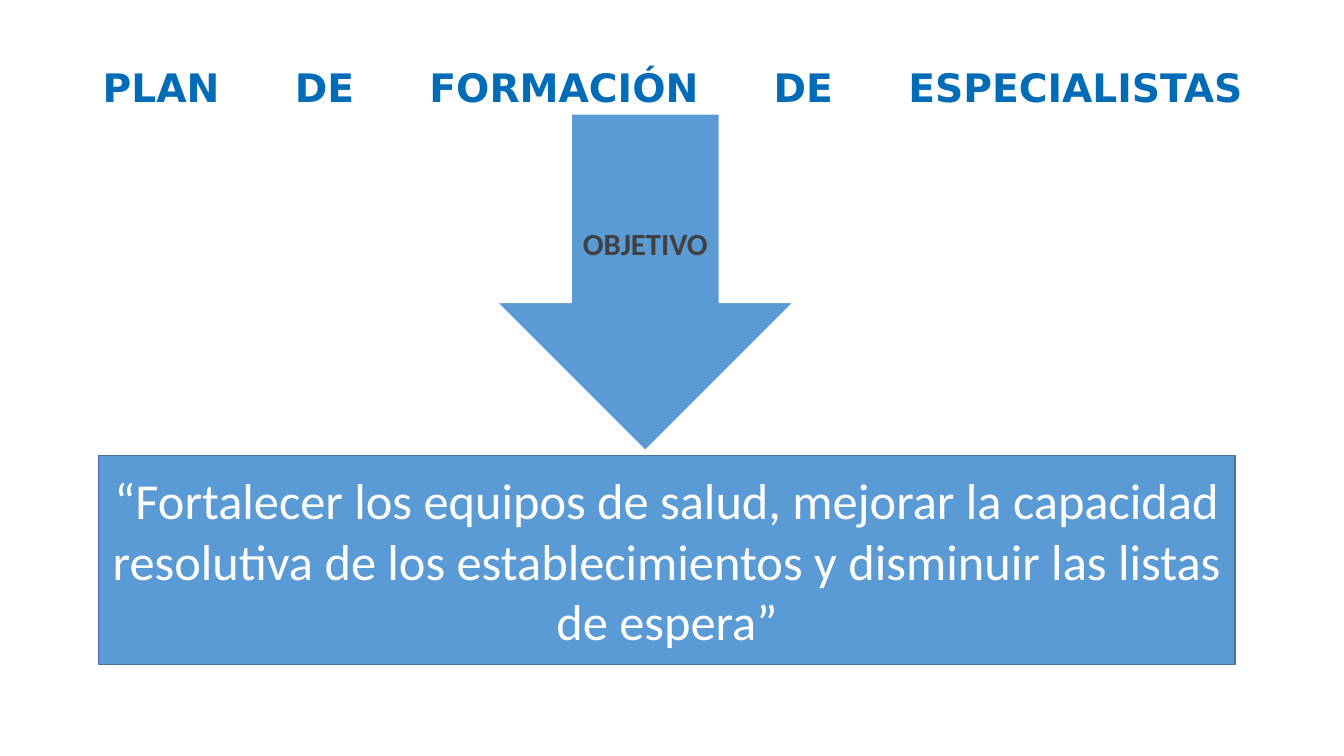
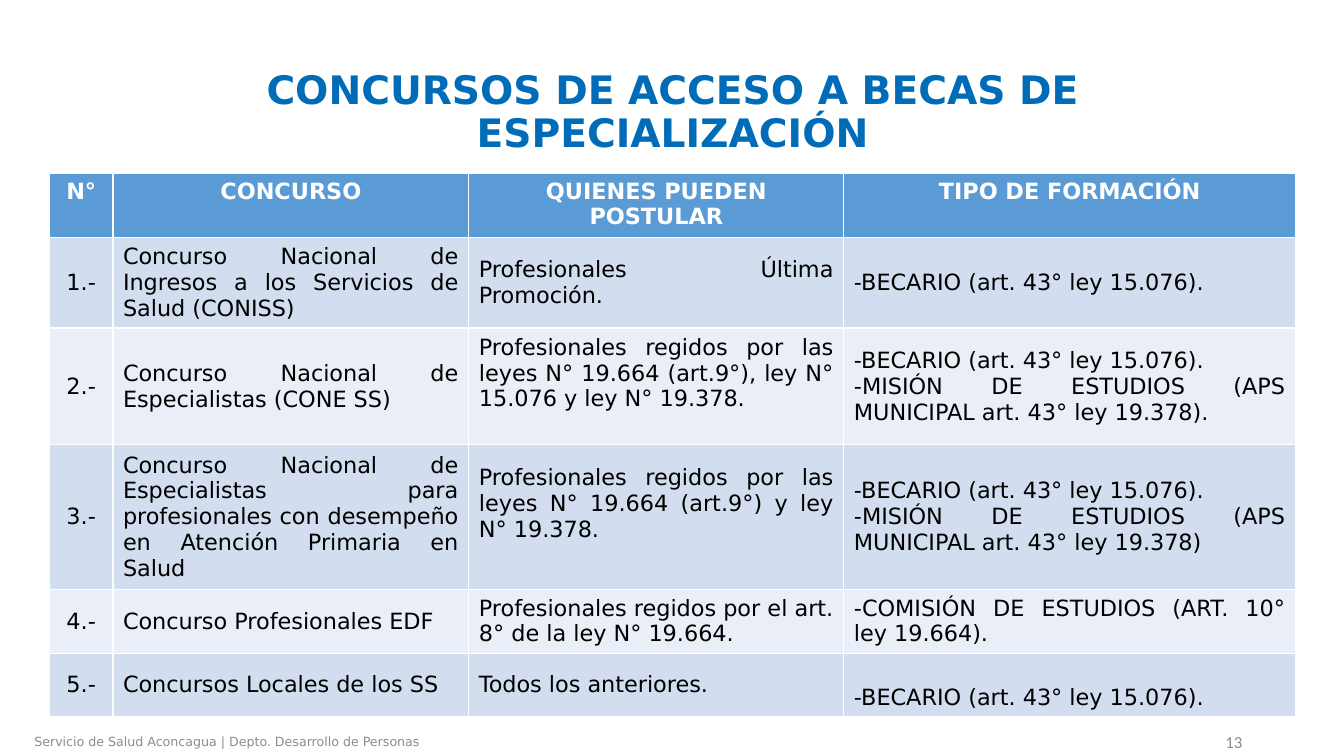
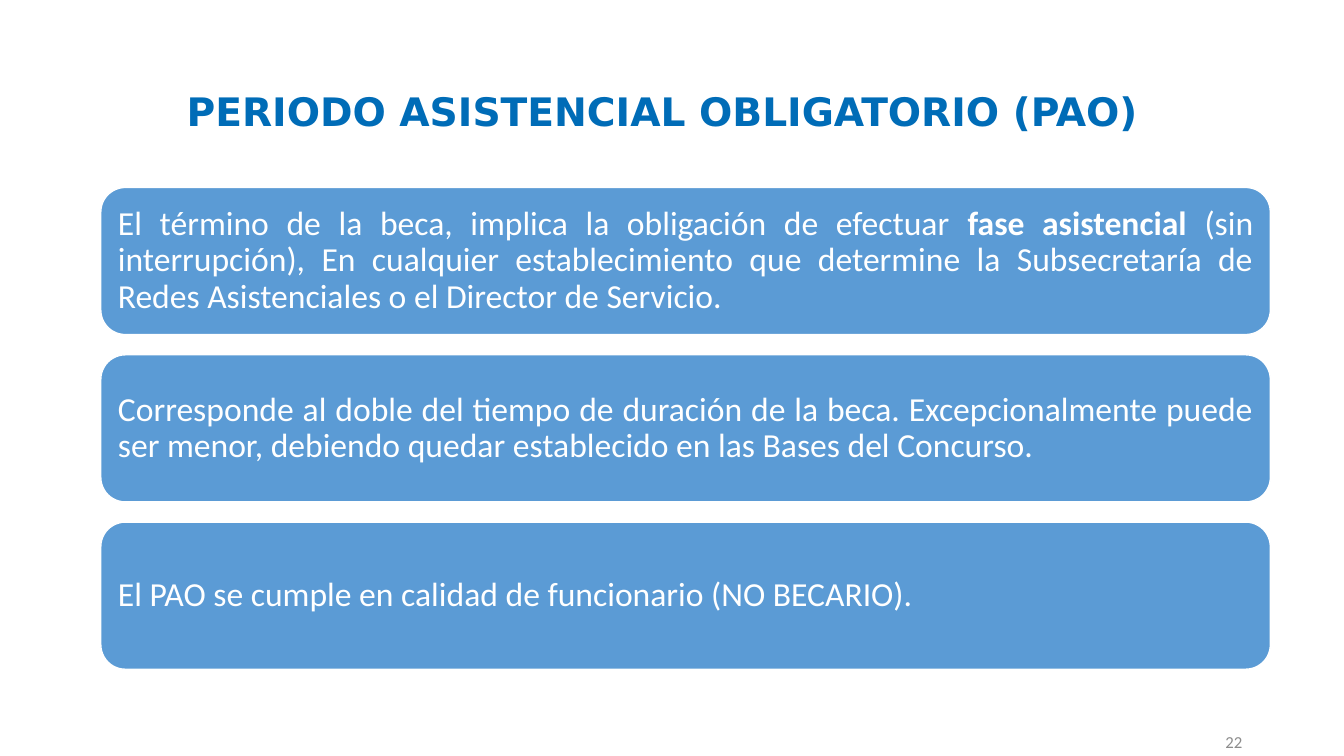
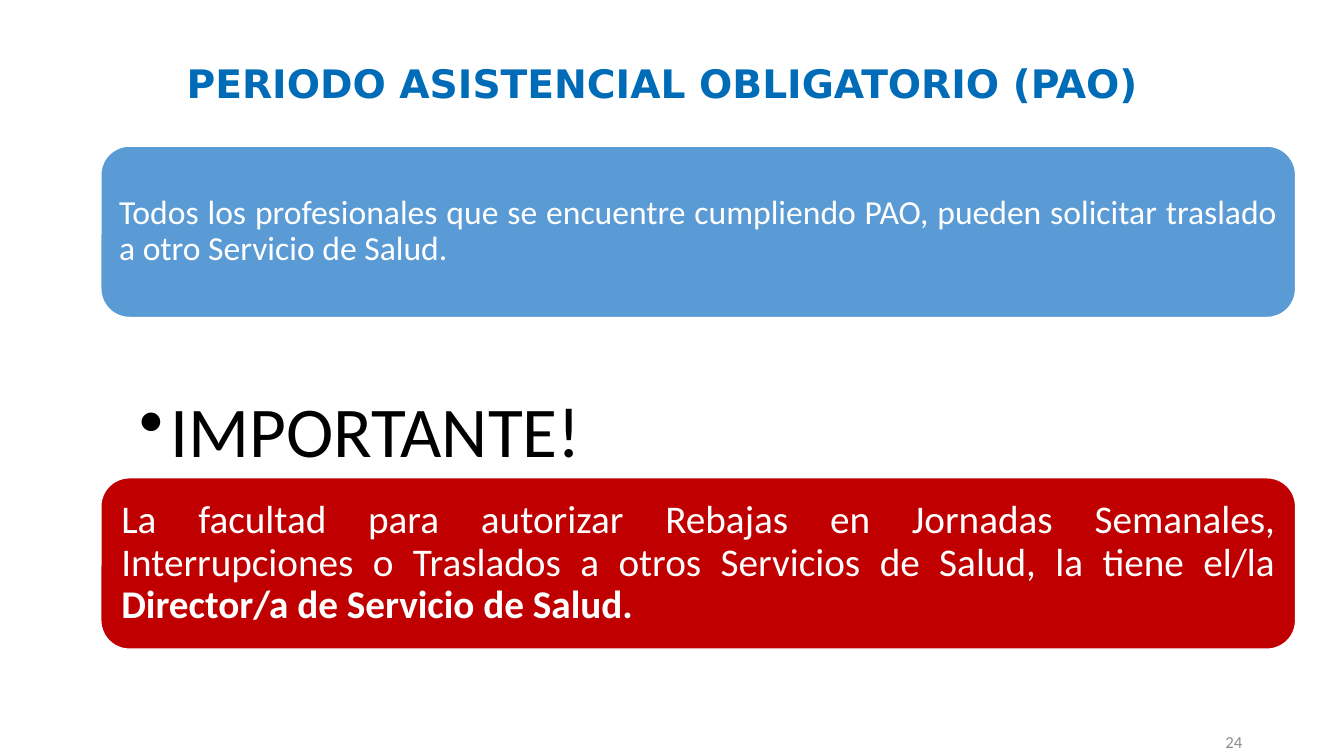
from copy import deepcopy

from lxml.etree import SubElement
from pptx import Presentation
from pptx.dml.color import RGBColor
from pptx.enum.shapes import MSO_SHAPE as Preset
from pptx.enum.text import MSO_ANCHOR as Anchor, PP_ALIGN as Align
from pptx.oxml.ns import qn
from pptx.util import Inches, Pt

COLORS = {
    "title": "006CB7",
    "blue": "5B9BD5",
    "outline": "43739E",
    "red": "C00000",
    "band_dark": "D2DEEF",
    "band_light": "EAEFF7",
    "white": "FFFFFF",
    "black": "000000",
    "dark_gray": "404040",
    "gray": "8C8C8C",
}
HEADING_FONT = "DejaVu Sans"
BODY_FONT = "Calibri"
PAO_TITLE = "PERIODO ASISTENCIAL OBLIGATORIO (PAO)"


def color(name):
    return RGBColor.from_string(COLORS[name])


def write(frame, text, size=24, font=BODY_FONT, ink="white", bold=False,
          align=Align.CENTER, spacing=None, bullet_indent=None, end_break=False):
    """Fill a text frame: one paragraph per line, with **marked** words in bold."""
    for index, line in enumerate(text.split("\n")):
        para = frame.paragraphs[0] if index == 0 else frame.add_paragraph()
        para.alignment = align
        if spacing:
            para.line_spacing = spacing
        if bullet_indent:
            props = para._p.get_or_add_pPr()
            props.set("marL", str(Inches(bullet_indent)))
            props.set("indent", str(-Inches(bullet_indent)))
            SubElement(props, qn("a:buChar"), char="•")
        for part_index, part in enumerate(line.split("**")):
            if not part:
                continue
            span = para.add_run()
            span.text = part
            span.font.size = Pt(size)
            span.font.name = font
            span.font.bold = bold or part_index % 2 == 1
            span.font.color.rgb = color(ink)
        if end_break:
            para.add_line_break()
            para._p[-1].append(deepcopy(span._r.get_or_add_rPr()))


class Deck:
    """Holds the presentation, the current page and the shared style."""

    def __init__(self):
        self.file = Presentation()
        self.file.slide_width = Inches(13.33)
        self.file.slide_height = Inches(7.5)
        self.page = None

    def new_page(self, title, left=0.92, top=0.4, width=11.5, number=None, **style):
        self.page = self.file.slides.add_slide(self.file.slide_layouts[6])
        self.text(title, left, top, width, 1.45, size=28, font=HEADING_FONT,
                  ink="title", bold=True, spacing=0.9, **style)
        if number:
            self.text(str(number), 9.42, 7.21, 3, 0.29, size=12, ink="gray",
                      align=Align.RIGHT)

    def fill_frame(self, shape, text, anchor, insets, style):
        frame = shape.text_frame
        frame.word_wrap = True
        frame.vertical_anchor = anchor
        (frame.margin_left, frame.margin_top,
         frame.margin_right, frame.margin_bottom) = map(Inches, insets)
        write(frame, text, **style)

    def text(self, text, left, top, width, height, anchor=Anchor.MIDDLE,
             insets=(0.1, 0.05, 0.1, 0.05), **style):
        box = self.page.shapes.add_textbox(*map(Inches, (left, top, width, height)))
        self.fill_frame(box, text, anchor, insets, style)

    def shape(self, preset, text, left, top, width, height, fill="blue",
              line="white", inset=0.1, **style):
        shape = self.page.shapes.add_shape(
            preset, *map(Inches, (left, top, width, height)))
        shape.shadow.inherit = False
        shape.fill.solid()
        shape.fill.fore_color.rgb = color(fill)
        shape.line.color.rgb = color(line)
        shape.line.width = Pt(1)
        self.fill_frame(shape, text, Anchor.MIDDLE, (inset,) * 4, style)

    def card(self, text, top, width, height, **style):
        self.shape(Preset.ROUNDED_RECTANGLE, text, 1, top, width, height,
                   align=Align.JUSTIFY, spacing=0.9, **style)

    def table(self, rows, left, top, widths, heights):
        """Draw a banded table and return it."""
        table = self.page.shapes.add_table(
            len(rows), len(widths), Inches(left), Inches(top),
            Inches(sum(widths)), Inches(sum(heights))).table
        for column, width in zip(table.columns, widths):
            column.width = Inches(width)
        for row_index, (row, height) in enumerate(zip(rows, heights)):
            table.rows[row_index].height = Inches(height)
            header = row_index == 0
            band = "band_dark" if row_index % 2 else "band_light"
            for column_index, text in enumerate(row):
                cell = table.cell(row_index, column_index)
                cell.fill.solid()
                cell.fill.fore_color.rgb = color("blue" if header else band)
                cell.vertical_anchor = Anchor.TOP if header else Anchor.MIDDLE
                centred = header or column_index == 0
                write(cell.text_frame, text, size=16, font=HEADING_FONT,
                      ink="white" if header else "black", bold=header,
                      align=Align.CENTER if centred else Align.JUSTIFY)
        return table


def objective_page(deck):
    deck.new_page("PLAN DE FORMACIÓN DE ESPECIALISTAS", align=Align.JUSTIFY,
                  end_break=True)
    deck.shape(Preset.DOWN_ARROW, "OBJETIVO", 4.93, 1.13, 2.94, 3.34, inset=0.09,
               size=22, ink="dark_gray", bold=True, spacing=0.9)
    deck.shape(Preset.FLOWCHART_PROCESS,
               "“Fortalecer los equipos de salud, mejorar la capacidad resolutiva "
               "de los establecimientos y disminuir las listas de espera”",
               0.98, 4.52, 11.27, 2.07, line="outline", size=36)


def contests_page(deck):
    deck.new_page("CONCURSOS DE ACCESO A BECAS DE ESPECIALIZACIÓN", number=13)
    scholar = "-BECARIO (art. 43° ley 15.076)."
    mission = "-MISIÓN DE ESTUDIOS (APS MUNICIPAL art. 43° ley 19.378)"
    rows = [
        ("N°", "CONCURSO", "QUIENES PUEDEN POSTULAR", "TIPO DE FORMACIÓN"),
        ("1.-", "Concurso Nacional de Ingresos a los Servicios de Salud (CONISS)",
         "Profesionales Última Promoción.", scholar),
        ("2.-", "Concurso Nacional de Especialistas (CONE SS)",
         "Profesionales regidos por las leyes N° 19.664 (art.9°), ley N° 15.076 "
         "y ley N° 19.378.", f"{scholar}\n{mission}."),
        ("3.-", "Concurso Nacional de Especialistas para profesionales con "
         "desempeño en Atención Primaria en Salud",
         "Profesionales regidos por las leyes N° 19.664 (art.9°) y ley N° 19.378.",
         f"{scholar}\n{mission}"),
        ("4.-", "Concurso Profesionales EDF",
         "Profesionales regidos por el art. 8° de la ley N° 19.664.",
         "-COMISIÓN DE ESTUDIOS (ART. 10° ley 19.664)."),
        ("5.-", "Concursos Locales de los SS", "Todos los anteriores.", scholar),
    ]
    table = deck.table(rows, 0.49, 1.72, (0.63, 3.53, 3.72, 4.48),
                       (0.62, 0.86, 1.13, 1.39, 0.62, 0.61))
    for row_index in (2, 3):
        table.cell(row_index, 2).margin_bottom = Inches(0.31)
    table.cell(5, 3).margin_top = Inches(0.31)
    deck.text("Servicio de Salud Aconcagua | Depto. Desarrollo de Personas",
              0, 7.21, 4.5, 0.29, size=9, font=HEADING_FONT, ink="gray")


def duty_page(deck):
    deck.new_page(PAO_TITLE, left=0.72, width=11.69, number=22)
    duties = (
        "El término de la beca, implica la obligación de efectuar **fase "
        "asistencial **(sin interrupción), En cualquier establecimiento que "
        "determine la Subsecretaría de Redes Asistenciales o el Director de "
        "Servicio.",
        "Corresponde al doble del tiempo de duración de la beca. Excepcionalmente "
        "puede ser menor, debiendo quedar establecido en las Bases del Concurso.",
        "El PAO se cumple en calidad de funcionario (NO BECARIO).",
    )
    height, gap = 1.46, 0.2
    for index, duty in enumerate(duties):
        deck.card(duty, 1.86 + index * (height + gap), 11.6, height)


def transfer_page(deck):
    deck.new_page(PAO_TITLE, left=0.72, top=0.13, width=11.69, number=24)
    width, height = 11.85, 1.7
    deck.card("Todos los profesionales que se encuentre cumpliendo PAO, pueden "
              "solicitar traslado a otro Servicio de Salud.", 1.45, width, height)
    deck.text("IMPORTANTE!", 1, 3.84, width, 1.18, anchor=Anchor.TOP,
              insets=(0.38, 0.09, 0.51, 0.09), size=51, ink="black",
              align=Align.LEFT, spacing=0.9, bullet_indent=0.31)
    deck.card("La facultad para autorizar Rebajas en Jornadas Semanales, "
              "Interrupciones o Traslados a otros Servicios de Salud, la tiene "
              "el/la **Director/a de Servicio de Salud.**",
              4.74, width, height, fill="red", inset=0.12, size=28)


def main():
    deck = Deck()
    for build in (objective_page, contests_page, duty_page, transfer_page):
        build(deck)
    deck.file.save("out.pptx")


if __name__ == "__main__":
    main()
